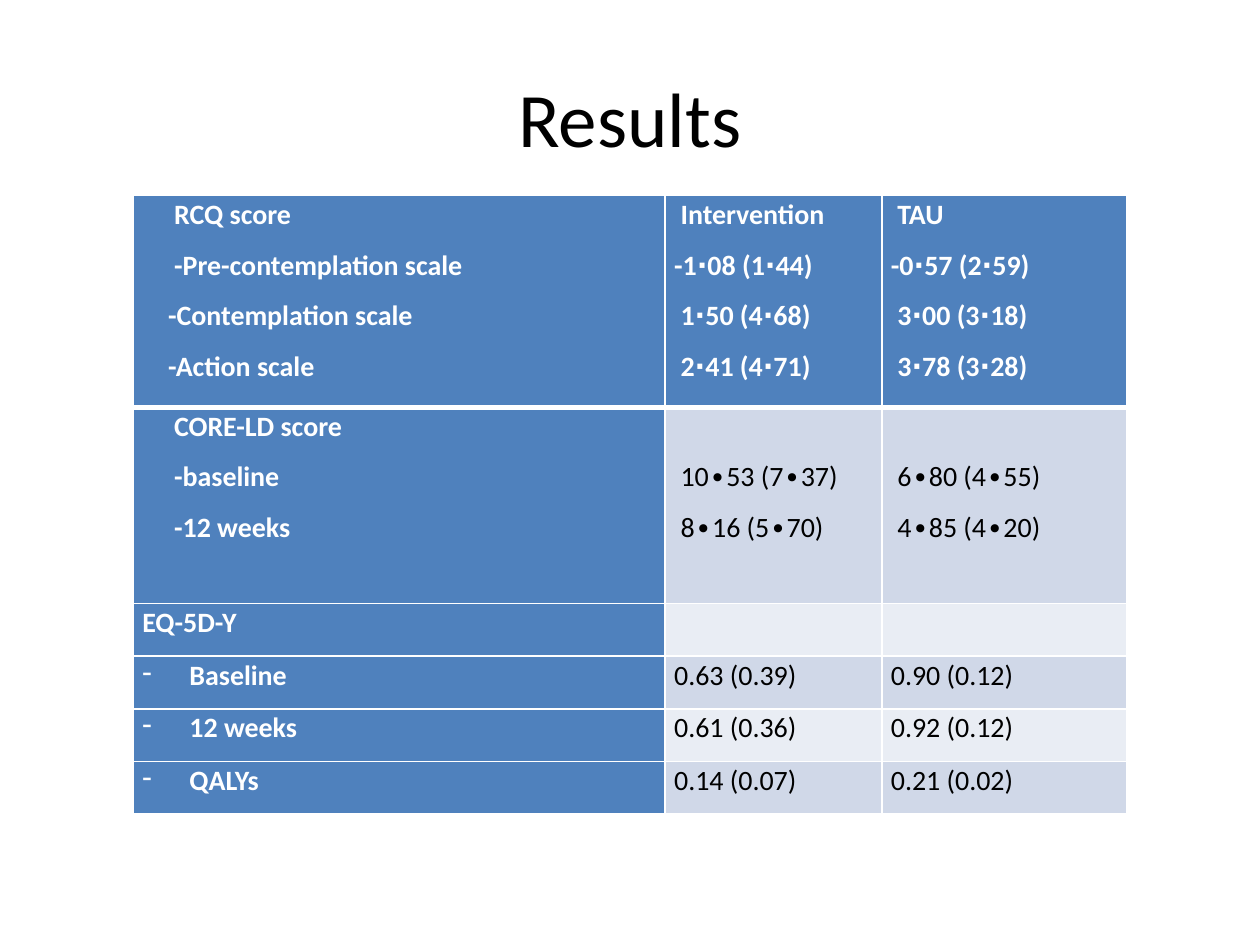
import pptx
import pptx.dml.color
import pptx.enum.text
import pptx.oxml.ns
import pptx.util
from lxml import etree

Cm = pptx.util.Cm
Pt = pptx.util.Pt
RGBColor = pptx.dml.color.RGBColor

BLACK = RGBColor(0x00, 0x00, 0x00)
WHITE = RGBColor(0xFF, 0xFF, 0xFF)
BLUE = RGBColor(0x4F, 0x81, 0xBD)
BAND_DARK = RGBColor(0xD0, 0xD8, 0xE8)
BAND_LIGHT = RGBColor(0xE9, 0xED, 0xF4)

# Left indents in cm
NONE, SLIGHT, MEDIUM, DEEP = 0, 0.13, 0.52, 0.64
BULLET = 0.95


def write(frame, lines, size=16, color=BLACK, bold=False, align=None,
          line_spacing=None, space_after=0, bullet=None):
    """Fill a text frame with (text, left indent in cm) lines."""
    for number, (text, indent) in enumerate(lines):
        paragraph = frame.paragraphs[0] if number == 0 else frame.add_paragraph()
        paragraph.alignment = align
        paragraph.line_spacing = line_spacing
        paragraph.space_after = Pt(space_after)
        run = paragraph.add_run()
        run.text = text
        run.font.name = "Calibri"
        run.font.size = Pt(size)
        run.font.bold = bold
        run.font.color.rgb = color
        properties = paragraph._p.get_or_add_pPr()
        properties.set("marL", str(Cm(indent)))
        if bullet:
            properties.set("indent", str(-Cm(indent)))
            mark = etree.SubElement(properties, pptx.oxml.ns.qn("a:buChar"))
            mark.set("char", bullet)


def set_border(cell, side, width):
    """Draw a white line on one side (L, R, T or B) of a cell."""
    line = etree.SubElement(cell._tc.get_or_add_tcPr(), pptx.oxml.ns.qn("a:ln" + side))
    line.set("w", str(Pt(width)))
    solid = etree.SubElement(line, pptx.oxml.ns.qn("a:solidFill"))
    etree.SubElement(solid, pptx.oxml.ns.qn("a:srgbClr")).set("val", str(WHITE))


presentation = pptx.Presentation()
presentation.slide_width = Cm(25.4)
presentation.slide_height = Cm(19.05)
slide = presentation.slides.add_slide(presentation.slide_layouts[6])

# Title
title = slide.shapes.add_textbox(Cm(1.27), Cm(0.76), Cm(22.86), Cm(3.18)).text_frame
title.word_wrap = True
title.vertical_anchor = pptx.enum.text.MSO_ANCHOR.MIDDLE
write(title, [("Results", NONE)], size=44, align=pptx.enum.text.PP_ALIGN.CENTER)

# Table contents: one list of lines per cell
scores = [
    [
        [("RCQ score", DEEP), ("-Pre-contemplation scale", DEEP),
         ("-Contemplation scale", MEDIUM), ("-Action scale", MEDIUM)],
        [("Intervention", SLIGHT), ("-1∙08 (1∙44)", NONE),
         ("1∙50 (4∙68)", SLIGHT), ("2∙41 (4∙71)", SLIGHT)],
        [("TAU", SLIGHT), ("-0∙57 (2∙59)", NONE),
         ("3∙00 (3∙18)", SLIGHT), ("3∙78 (3∙28)", SLIGHT)],
    ],
    [
        [("CORE-LD score", DEEP), ("-baseline", DEEP), ("-12 weeks", DEEP)],
        [("10∙53 (7∙37)", SLIGHT), ("8∙16 (5∙70)", SLIGHT)],
        [("6∙80 (4∙55)", SLIGHT), ("4∙85 (4∙20)", SLIGHT)],
    ],
    [[("EQ-5D-Y", NONE)], [], []],
    [[("Baseline", BULLET)], [("0.63 (0.39)", NONE)], [("0.90 (0.12)", NONE)]],
    [[("12 weeks", BULLET)], [("0.61 (0.36)", NONE)], [("0.92 (0.12)", NONE)]],
    [[("QALYs", BULLET)], [("0.14 (0.07)", NONE)], [("0.21 (0.02)", NONE)]],
]
column_widths = [10.72, 4.37, 4.93]
row_heights = [4.27, 3.96] + [1.06] * 4

# Table
table = slide.shapes.add_table(
    len(row_heights), len(column_widths), Cm(2.69), Cm(3.94),
    Cm(sum(column_widths)), Cm(sum(row_heights))).table
table.first_col = True
for column, width in zip(table.columns, column_widths):
    column.width = Cm(width)

for r, (row, height) in enumerate(zip(scores, row_heights)):
    table.rows[r].height = Cm(height)
    for c, lines in enumerate(row):
        cell = table.cell(r, c)
        heading = r == 0 or c == 0
        cell.margin_left = cell.margin_right = Cm(0.18)
        # The CORE-LD values start one line below their heading
        cell.margin_top = Cm(1.02) if r == 1 and c > 0 else 0
        cell.margin_bottom = 0

        # Thick rule below the header row
        for side in "LRTB":
            thick = (r, side) in ((0, "B"), (1, "T"))
            set_border(cell, side, 3 if thick else 1)
        cell.fill.solid()
        cell.fill.fore_color.rgb = (
            BLUE if heading else BAND_DARK if r % 2 else BAND_LIGHT)

        write(cell.text_frame, lines, color=WHITE if heading else BLACK,
              bold=heading, line_spacing=1.07, space_after=8,
              bullet="-" if c == 0 and r > 2 else None)

presentation.save("out.pptx")
